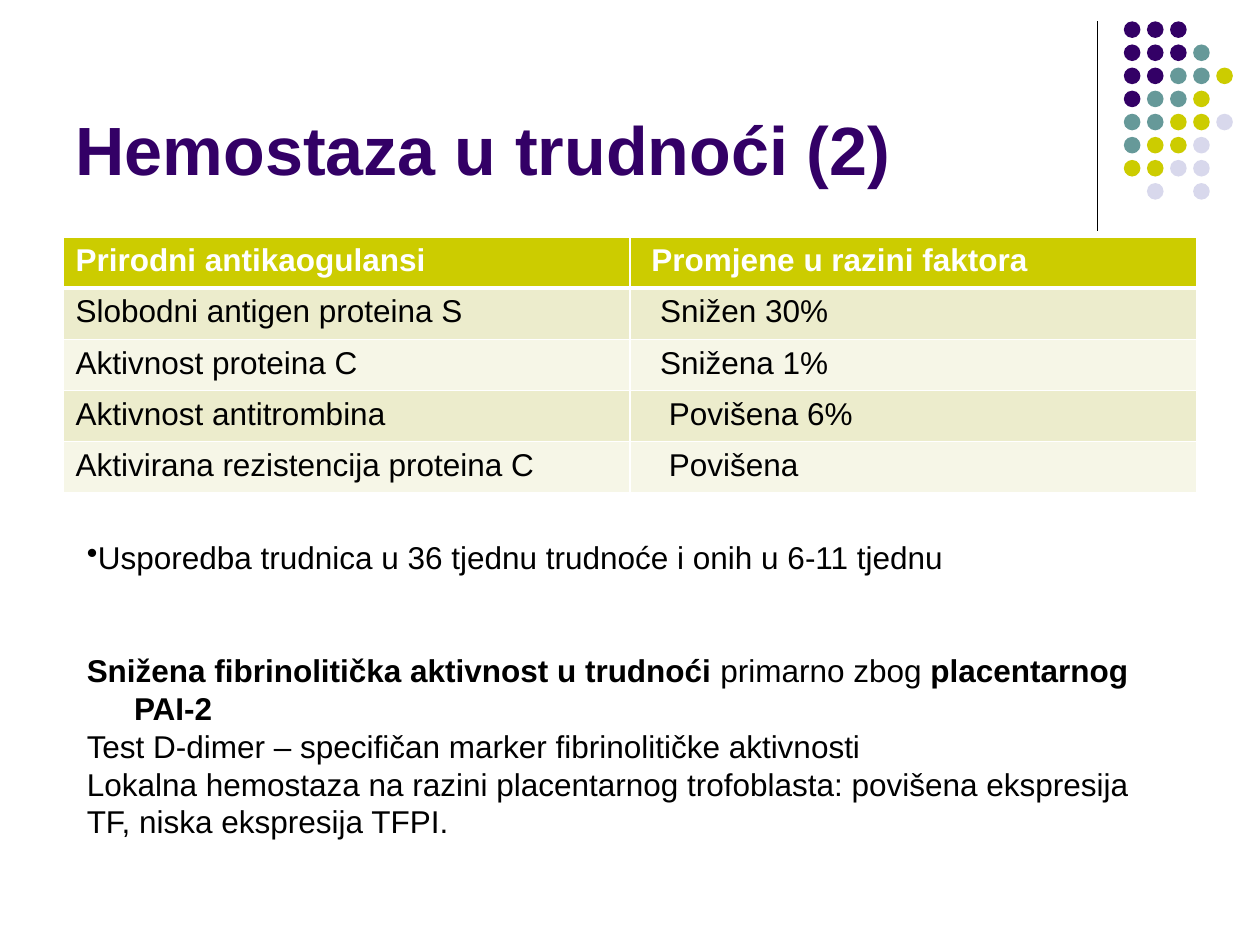
from lxml.etree import SubElement
from pptx import Presentation
from pptx.dml.color import RGBColor
from pptx.enum.shapes import MSO_CONNECTOR, MSO_SHAPE
from pptx.enum.text import MSO_ANCHOR, PP_ALIGN
from pptx.oxml.ns import qn
from pptx.util import Pt

FONT = "Arial"
BLACK = RGBColor(0x00, 0x00, 0x00)
WHITE = RGBColor(0xFF, 0xFF, 0xFF)
PURPLE = RGBColor(0x33, 0x00, 0x66)
TEAL = RGBColor(0x66, 0x99, 0x99)
YELLOW = RGBColor(0xCC, 0xCC, 0x00)
LAVENDER = RGBColor(0xD8, 0xD8, 0xEC)
BAND_DARK = RGBColor(0xEC, 0xEC, 0xCC)
BAND_LIGHT = RGBColor(0xF6, 0xF6, 0xE7)

DOT_COLORS = {"P": PURPLE, "T": TEAL, "Y": YELLOW, "L": LAVENDER}
DOT_ROWS = ["PPP", "PPPT", "PPTTY", "PTTY", "TTYYL", "TYYL", "YYLL", " L L"]
TABLE_ROWS = [
    ("Prirodni antikaogulansi", "Promjene u razini faktora", 5),
    ("Slobodni antigen proteina S", "Snižen 30%", 10),
    ("Aktivnost proteina C", "Snižena 1%", 10),
    ("Aktivnost antitrombina", "Povišena 6%", 15),
    ("Aktivirana rezistencija proteina C", "Povišena", 15),
]


def add_text(paragraph, text, size=18, color=BLACK, bold=False):
    """Append a formatted run to a paragraph."""
    run = paragraph.add_run()
    run.text = text
    run.font.name = FONT
    run.font.size = Pt(size)
    run.font.bold = bold
    run.font.color.rgb = color


def set_indent(paragraph, left, first):
    """Set the left margin and first-line indent of a paragraph."""
    properties = paragraph._p.get_or_add_pPr()
    properties.set("marL", str(Pt(left)))
    properties.set("indent", str(Pt(first)))
    return properties


def set_border(cell, side, width):
    """Draw one white side of a table cell."""
    line = SubElement(cell._tc.get_or_add_tcPr(), qn(f"a:ln{side}"), w=str(Pt(width)))
    fill = SubElement(line, qn("a:solidFill"))
    SubElement(fill, qn("a:srgbClr"), val=str(WHITE))


def add_title(slide, left, top, width, height):
    """Place and format the slide title."""
    title = slide.shapes.title
    title.left, title.top, title.width, title.height = map(Pt, (left, top, width, height))
    frame = title.text_frame
    frame.word_wrap = True
    frame.vertical_anchor = MSO_ANCHOR.BOTTOM
    paragraph = frame.paragraphs[0]
    paragraph.alignment = PP_ALIGN.LEFT
    add_text(paragraph, "Hemostaza u trudnoći (2)", size=39, color=PURPLE, bold=True)


def add_ornament(slide, left, top, height):
    """Draw the vertical rule and the grid of coloured dots beside it."""
    rule = slide.shapes.add_connector(
        MSO_CONNECTOR.STRAIGHT, Pt(left), Pt(top), Pt(left), Pt(top + height))
    rule.line.color.rgb = BLACK
    rule.line.width = Pt(0.75)
    SubElement(rule._element.spPr, qn("a:effectLst"))
    group = slide.shapes.add_group_shape()
    pitch, diameter = 13.2, 9.5
    for row, letters in enumerate(DOT_ROWS):
        for column, letter in enumerate(letters):
            if letter in DOT_COLORS:
                dot = group.shapes.add_shape(
                    MSO_SHAPE.OVAL, Pt(left + 15 + column * pitch),
                    Pt(top + row * pitch), Pt(diameter), Pt(diameter))
                dot.shadow.inherit = False
                dot.fill.solid()
                dot.fill.fore_color.rgb = DOT_COLORS[letter]
                dot.line.fill.background()


def add_factor_table(slide, left, top, width, height):
    """Add the table of natural anticoagulants."""
    table = slide.shapes.add_table(
        len(TABLE_ROWS), 2, Pt(left), Pt(top), Pt(width), Pt(height)).table
    for row, (factor, change, indent) in enumerate(TABLE_ROWS):
        table.rows[row].height = Pt(height / len(TABLE_ROWS))
        header = row == 0
        fill = YELLOW if header else BAND_DARK if row % 2 else BAND_LIGHT
        for column, text in enumerate((factor, change)):
            cell = table.cell(row, column)
            cell.margin_left = Pt(7.2 + indent * column)
            add_text(cell.text_frame.paragraphs[0], text,
                     color=WHITE if header else BLACK, bold=header)
            widths = {"L": 1, "R": 1, "T": 3 if row == 1 else 1, "B": 3 if header else 1}
            for side, line_width in widths.items():
                set_border(cell, side, line_width)
            cell.fill.solid()
            cell.fill.fore_color.rgb = fill


def add_notes_text(slide, left, top, width, height):
    """Add the bullet and the remarks below the table."""
    frame = slide.shapes.add_textbox(Pt(left), Pt(top), Pt(width), Pt(height)).text_frame
    frame.word_wrap = True
    bullet = frame.paragraphs[0]
    SubElement(set_indent(bullet, 0, 0), qn("a:buChar"), char="•")
    add_text(bullet, "Usporedba trudnica u 36 tjednu trudnoće i onih u 6-11 tjednu")
    activity = frame.add_paragraph()
    activity.space_before = Pt(43.2)
    set_indent(activity, 27, -27)
    add_text(activity, "Snižena fibrinolitička aktivnost u trudnoći ", bold=True)
    add_text(activity, "primarno zbog ")
    add_text(activity, "placentarnog PAI-2", bold=True)
    for text in (
        "Test D-dimer – specifičan marker fibrinolitičke aktivnosti",
        "Lokalna hemostaza na razini placentarnog trofoblasta: "
        "povišena ekspresija TF, niska ekspresija TFPI.",
    ):
        add_text(frame.add_paragraph(), text)


def main():
    """Build and save the presentation."""
    presentation = Presentation()
    presentation.slide_width, presentation.slide_height = Pt(720), Pt(540)
    slide = presentation.slides.add_slide(presentation.slide_layouts[5])
    add_ornament(slide, 627.2, 12.2, 119.6)
    add_title(slide, 36, 9.4, 594, 102.2)
    add_factor_table(slide, 36, 135.4, 648, 146.2)
    add_notes_text(slide, 42.5, 303.8, 635, 225.4)
    presentation.save("out.pptx")


if __name__ == "__main__":
    main()
